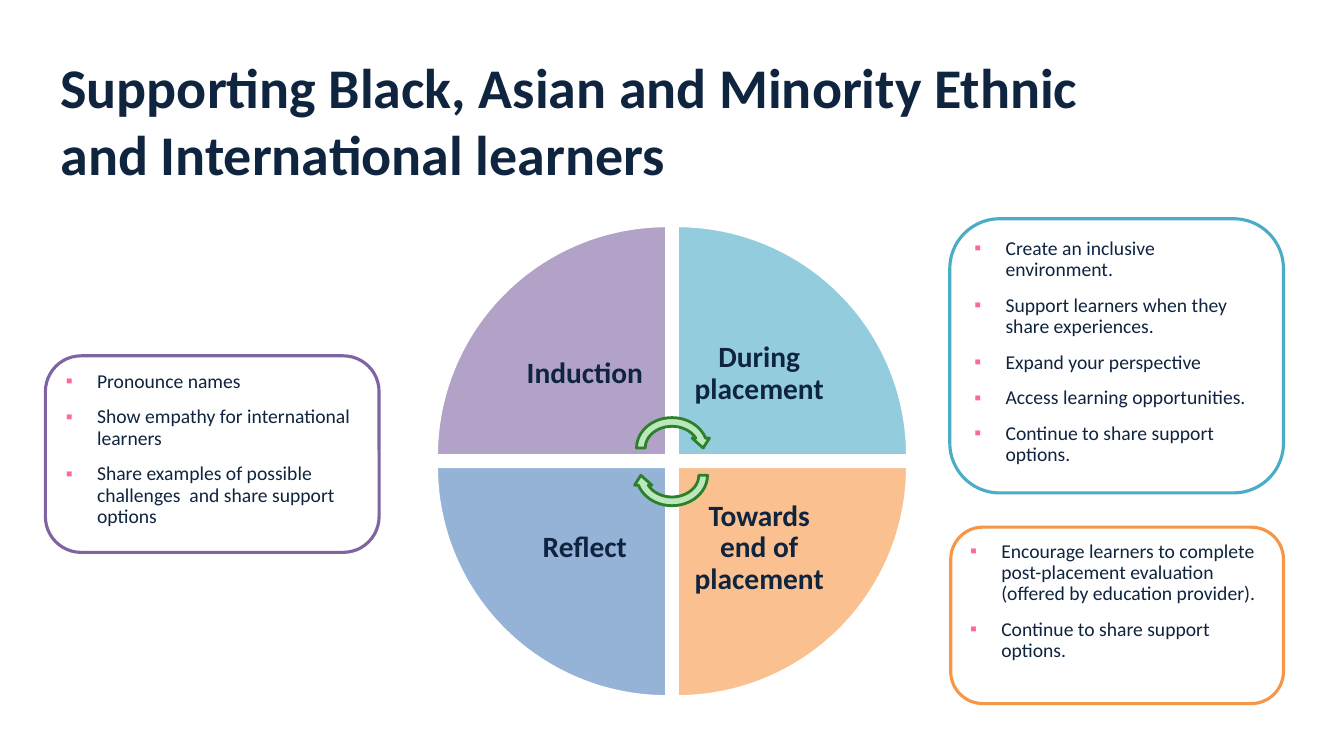
from dataclasses import dataclass

from lxml.etree import SubElement
from pptx import Presentation
from pptx.dml.color import RGBColor
from pptx.enum.shapes import MSO_SHAPE
from pptx.enum.text import MSO_ANCHOR, PP_ALIGN
from pptx.oxml.ns import qn
from pptx.util import Inches, Pt

FONT = "Calibri"
NAVY, WHITE, PINK = "0F243E", "FFFFFF", "FF6699"
PALE_GREEN, GREEN = "BAE8BA", "2C802C"

WHEEL_LEFT, WHEEL_TOP = 4.33, 2.24
WEDGE, WEDGE_STEP = 2.28, 2.39
LABEL = 1.62
BULLET_INDENT = 0.31


@dataclass
class Stage:
    label: str
    col: int
    row: int
    rotation: int
    color: str


@dataclass
class Callout:
    left: float
    top: float
    width: float
    height: float
    color: str
    items: list[str]


STAGES = [
    Stage("Induction", 0, 0, 0, "B3A2C7"),
    Stage("During placement", 1, 0, 90, "93CDDD"),
    Stage("Towards end of placement", 1, 1, 180, "FAC090"),
    Stage("Reflect", 0, 1, 270, "95B3D7"),
]

CALLOUTS = [
    Callout(0.45, 3.53, 3.31, 1.95, "8064A2", [
        "Pronounce names",
        "Show empathy for international learners",
        "Share examples of possible challenges  and share support options",
    ]),
    Callout(9.42, 2.17, 3.31, 2.72, "4BACC6", [
        "Create an inclusive environment.",
        "Support learners when they share experiences.",
        "Expand your perspective",
        "Access learning opportunities.",
        "Continue to share support options.",
    ]),
    Callout(9.43, 5.23, 3.3, 1.75, "F79646", [
        "Encourage learners to complete post-placement evaluation "
        "(offered by education provider).",
        "Continue to share support options.",
    ]),
]


def rgb(color: str) -> RGBColor:
    return RGBColor.from_string(color)


def add_run(p, text: str, size: float, bold: bool = False) -> None:
    r = p.add_run()
    r.text = text
    r.font.name = FONT
    r.font.size = Pt(size)
    r.font.bold = bold
    r.font.color.rgb = rgb(NAVY)


def add_text(s, left: float, top: float, width: float, height: float, inset: float):
    """Add a wrapping text box and return its text frame."""
    tf = s.shapes.add_textbox(Inches(left), Inches(top), Inches(width), Inches(height)).text_frame
    tf.word_wrap = True
    tf.margin_left = tf.margin_right = tf.margin_top = tf.margin_bottom = Inches(inset)
    return tf


def add_shape(s, kind, left: float, top: float, width: float, height: float,
              fill: str | None, line: str, line_width: float):
    sp = s.shapes.add_shape(kind, Inches(left), Inches(top), Inches(width), Inches(height))
    sp.shadow.inherit = False
    if fill:
        sp.fill.solid()
        sp.fill.fore_color.rgb = rgb(fill)
    else:
        sp.fill.background()
    sp.line.color.rgb = rgb(line)
    sp.line.width = Pt(line_width)
    return sp


def add_bullet(p) -> None:
    pPr = p._p.get_or_add_pPr()
    pPr.set("marL", str(Inches(BULLET_INDENT)))
    pPr.set("indent", str(-Inches(BULLET_INDENT)))
    SubElement(SubElement(pPr, qn("a:buClr")), qn("a:srgbClr")).set("val", PINK)
    SubElement(pPr, qn("a:buFont")).set("typeface", "Arial")
    SubElement(pPr, qn("a:buChar")).set("char", "▪")


def draw_title(s) -> None:
    tf = add_text(s, 0.6, 0.52, 10.87, 1.11, 0)
    add_run(tf.paragraphs[0],
            "Supporting Black, Asian and Minority Ethnic and International learners", 40, True)


def draw_stage(s, stage: Stage) -> None:
    left = WHEEL_LEFT + stage.col * WEDGE_STEP
    top = WHEEL_TOP + stage.row * WEDGE_STEP
    sp = add_shape(s, MSO_SHAPE.PIE_WEDGE, left, top, WEDGE, WEDGE, stage.color, WHITE, 2)
    sp.rotation = stage.rotation

    # Labels sit in the corner of each wedge nearest the hub.
    shift = WEDGE - LABEL
    tf = add_text(s, left + shift * (1 - stage.col), top + shift * (1 - stage.row),
                  LABEL, LABEL, 0.16)
    tf.vertical_anchor = MSO_ANCHOR.MIDDLE
    p = tf.paragraphs[0]
    p.alignment = PP_ALIGN.CENTER
    p.line_spacing = 0.9
    add_run(p, stage.label, 21, True)


def draw_callout(s, callout: Callout) -> None:
    sp = add_shape(s, MSO_SHAPE.ROUNDED_RECTANGLE, callout.left, callout.top,
                   callout.width, callout.height, None, callout.color, 2.25)
    sp.adjustments[0] = 0.182
    tf = sp.text_frame
    tf.word_wrap = True
    tf.vertical_anchor = MSO_ANCHOR.TOP
    for i, item in enumerate(callout.items):
        p = tf.paragraphs[0] if i == 0 else tf.add_paragraph()
        add_bullet(p)
        p.alignment = PP_ALIGN.LEFT
        p.line_spacing = 0.9
        p.space_before = Pt(10.4 if i else 0)
        add_run(p, item, 14)


def main() -> None:
    prs = Presentation()
    prs.slide_width, prs.slide_height = Inches(13.33), Inches(7.5)
    s = prs.slides.add_slide(prs.slide_layouts[6])
    draw_title(s)
    for stage in STAGES:
        draw_stage(s, stage)
    for top, rotation in ((4.1, 0), (4.37, 180)):
        sp = add_shape(s, MSO_SHAPE.CIRCULAR_ARROW, 6.27, top, 0.79, 0.69, PALE_GREEN, GREEN, 2)
        sp.rotation = rotation
    for callout in CALLOUTS:
        draw_callout(s, callout)
    prs.save("out.pptx")


if __name__ == "__main__":
    main()
